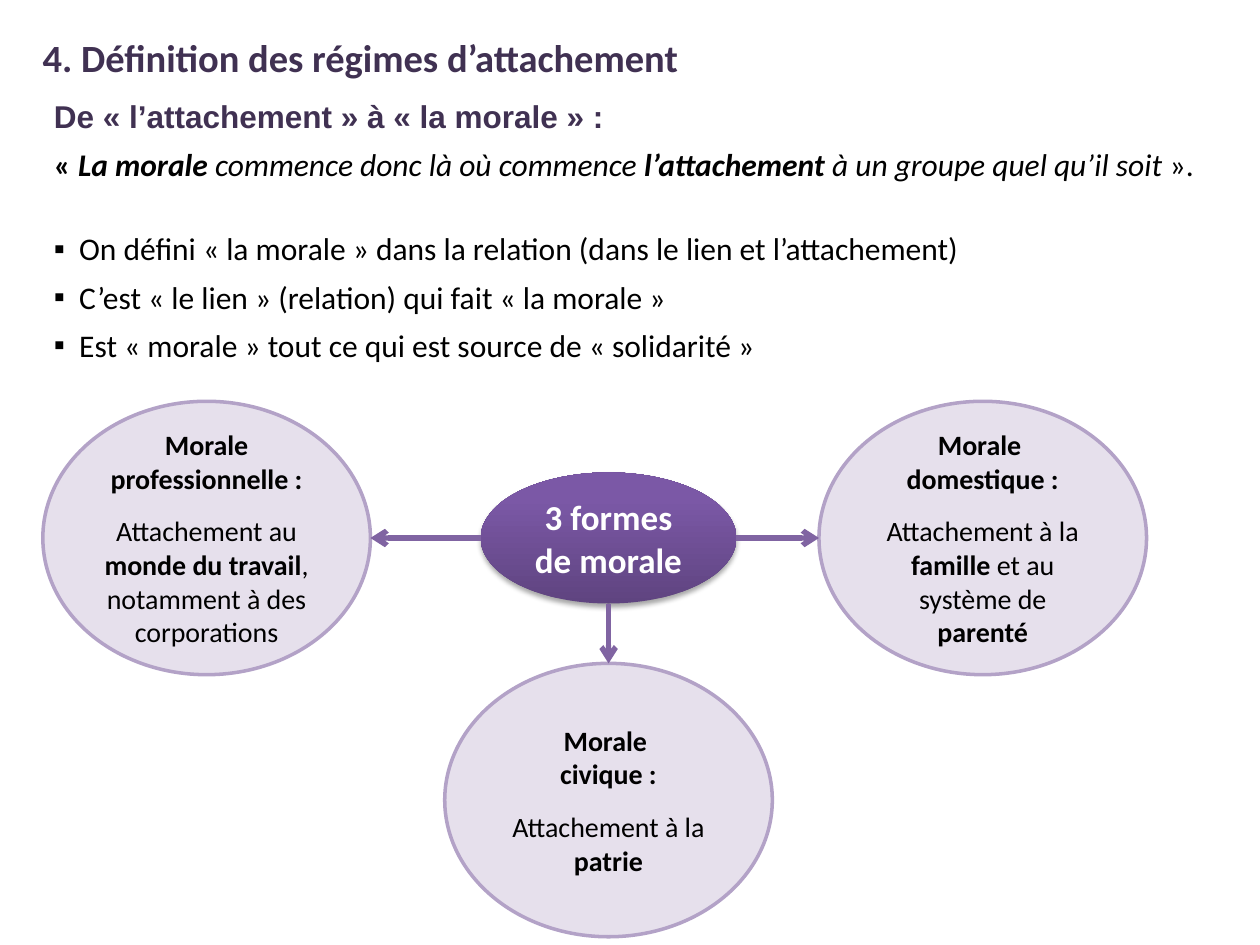
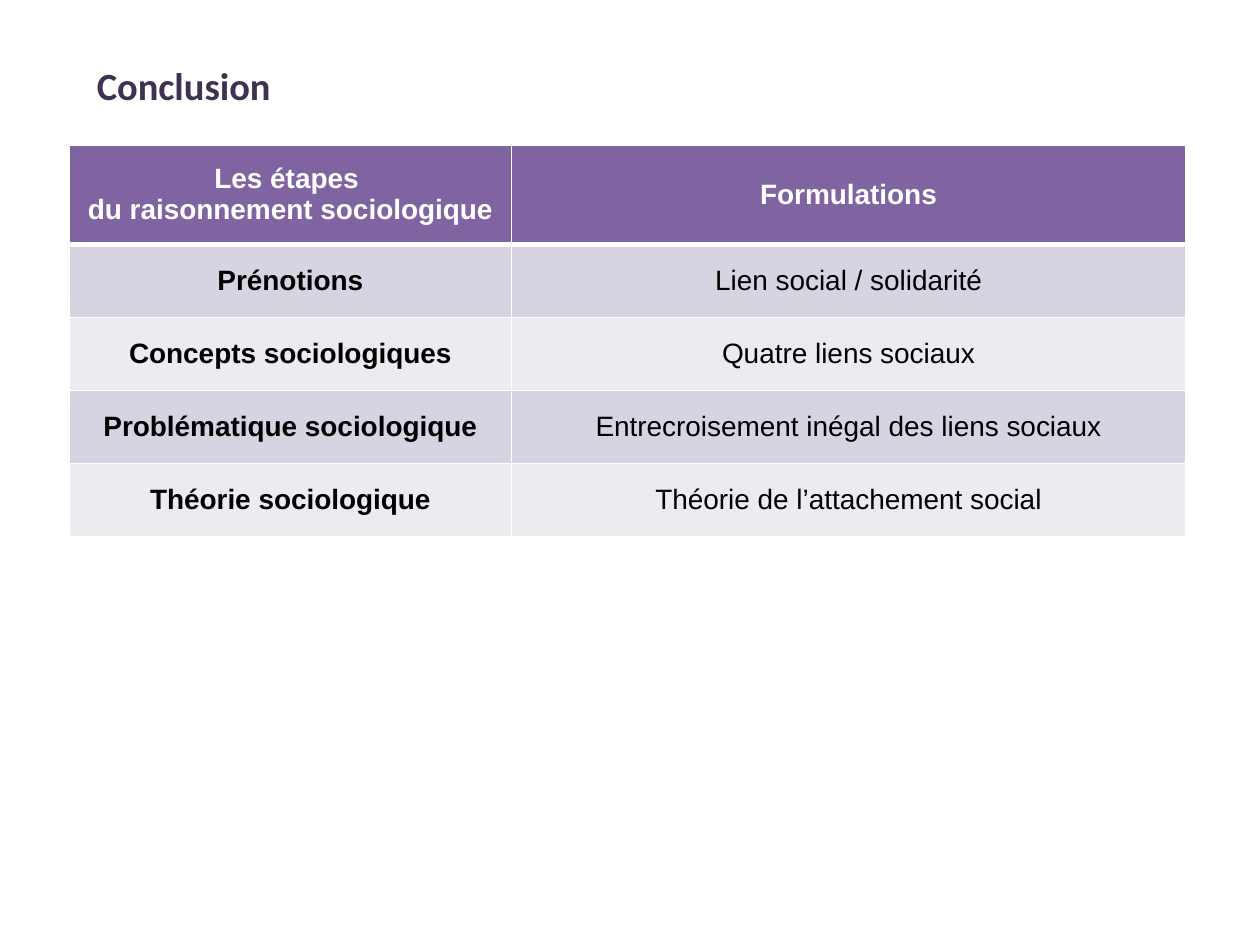
from lxml.etree import SubElement
from pptx import Presentation
from pptx.dml.color import RGBColor
from pptx.enum.shapes import MSO_CONNECTOR, MSO_SHAPE
from pptx.enum.text import MSO_ANCHOR, PP_ALIGN
from pptx.oxml.ns import qn
from pptx.util import Inches, Pt

COLORS = {
    "title": "403152", "text": "000000", "white": "FFFFFF",
    "accent": "8064A2", "bubble": "E6E0EC", "bubble_line": "B3A2C7",
    "hub_dark": "5F4480", "hub_light": "7B58A6",
    "band_dark": "D8D3E0", "band_light": "EDEAF0",
}
HUB_X, HUB_Y, HUB_W, HUB_H = 4.83, 4.27, 2.03, 1.04
BUBBLE_W, BUBBLE_H = 2.6, 2.17
BULLETS = [
    "On défini « la morale » dans la relation (dans le lien et l’attachement)",
    "C’est « le lien » (relation) qui fait « la morale »",
    "Est « morale » tout ce qui est source de « solidarité »",
]
QUOTE = [
    ("« ", "b"), ("La morale ", "bi"), ("commence donc là où commence ", "i"),
    ("l’attachement", "bi"), (" à un groupe quel qu’il soit", "i"), (" ».", ""),
]
STEPS = [
    ("Les étapes \ndu raisonnement sociologique", "Formulations"),
    ("Prénotions", "Lien social / solidarité"),
    ("Concepts sociologiques", "Quatre liens sociaux"),
    ("Problématique sociologique", "Entrecroisement inégal des liens sociaux"),
    ("Théorie sociologique", "Théorie de l’attachement social"),
]


def rgb(name):
    """Return the palette colour with this name."""
    return RGBColor.from_string(COLORS[name])


def style_run(r, size, color="text", style="", font="Calibri"):
    """Format a run; style holds b for bold and i for italic."""
    r.font.name, r.font.size = font, Pt(size)
    r.font.bold, r.font.italic = "b" in style, "i" in style
    r.font.color.rgb = rgb(color)


def fill_paragraph(p, runs, size, **look):
    """Write (text, style) runs into a paragraph."""
    for text, style in runs:
        r = p.add_run()
        r.text = text
        style_run(r, size, style=style, **look)


def indent(p, left, first=0, bullet=None):
    """Set the indents and the bullet of a justified paragraph."""
    p.alignment, p.space_before = PP_ALIGN.JUSTIFY, Pt(6)
    pPr = p._p.get_or_add_pPr()
    pPr.set("marL", str(Inches(left)))
    pPr.set("indent", str(Inches(first)))
    if bullet:
        SubElement(pPr, qn("a:buFont"), typeface="Arial")
        SubElement(pPr, qn("a:buChar"), char=bullet)


def add_text_box(s, x, y, w, h):
    """Add a wrapping text box and return its text frame."""
    tf = s.shapes.add_textbox(Inches(x), Inches(y), Inches(w), Inches(h)).text_frame
    tf.word_wrap = True
    return tf


def add_title(s, x, y, w, text):
    """Add the slide title."""
    p = add_text_box(s, x, y, w, 0.47).paragraphs[0]
    p.text = text
    style_run(p.runs[0], 22, "title", "b")


def add_intro(s):
    """Add the heading with its quotation."""
    tf = add_text_box(s, 0.24, 0.72, 9.53, 0.79)
    heading, quote = tf.paragraphs[0], tf.add_paragraph()
    heading.text = "De « l’attachement » à « la morale » :"
    style_run(heading.runs[0], 18, "title", "b", "Arial")
    fill_paragraph(quote, QUOTE, 18)
    for p in (heading, quote):
        indent(p, 0.09)


def add_bullets(s):
    """Add the bulleted definitions."""
    tf = add_text_box(s, 0.24, 1.77, 9.37, 1.18)
    tf.text = "\n".join(BULLETS)
    for p in tf.paragraphs:
        indent(p, 0.29, -0.2, "▪")
        style_run(p.runs[0], 18)


def add_ellipse(s, cx, cy, w, h):
    """Add an ellipse around a centre point."""
    sp = s.shapes.add_shape(MSO_SHAPE.OVAL, Inches(cx - w / 2), Inches(cy - h / 2),
                            Inches(w), Inches(h))
    sp.shadow.inherit = False
    sp.text_frame.word_wrap = True
    sp.text_frame.vertical_anchor = MSO_ANCHOR.MIDDLE
    return sp


def add_hub(s):
    """Add the central ellipse with its gradient and shadow."""
    sp = add_ellipse(s, HUB_X, HUB_Y, HUB_W, HUB_H)
    sp.line.fill.background()
    sp.fill.gradient()
    sp.fill.gradient_angle = 90
    stops = zip(sp.fill.gradient_stops, (0, 0.8), ("hub_dark", "hub_light"))
    for stop, position, color in stops:
        stop.position, stop.color.rgb = position, rgb(color)
    effects = sp._element.spPr.find(qn("a:effectLst"))
    shadow = SubElement(effects, qn("a:outerShdw"), blurRad=str(Pt(3.1)),
                        dist=str(Pt(1.8)), dir="5400000", rotWithShape="0")
    color = SubElement(shadow, qn("a:srgbClr"), val=COLORS["text"])
    SubElement(color, qn("a:alpha"), val="35000")
    p = sp.text_frame.paragraphs[0]
    p.text = "3 formes de morale"
    p.alignment = PP_ALIGN.CENTER
    style_run(p.runs[0], 20, "white", "b")


def add_bubble(s, cx, cy, heading, body):
    """Add a form of morality: bold heading lines, then its attachment."""
    sp = add_ellipse(s, cx, cy, BUBBLE_W, BUBBLE_H)
    sp.fill.solid()
    sp.fill.fore_color.rgb = rgb("bubble")
    sp.line.color.rgb, sp.line.width = rgb("bubble_line"), Pt(2)
    tf = sp.text_frame
    tf.text = heading
    for p in tf.paragraphs:
        style_run(p.runs[0], 16, style="b")
    p = tf.add_paragraph()
    p.space_before = Pt(11)
    fill_paragraph(p, body, 16)
    for p in tf.paragraphs:
        p.alignment = PP_ALIGN.CENTER


def add_arrow(s, x1, y1, x2, y2):
    """Add a straight arrow."""
    c = s.shapes.add_connector(MSO_CONNECTOR.STRAIGHT, Inches(x1), Inches(y1),
                               Inches(x2), Inches(y2))
    c.line.color.rgb, c.line.width = rgb("accent"), Pt(3)
    SubElement(c.line._get_or_add_ln(), qn("a:tailEnd"), type="arrow")
    SubElement(c._element.spPr, qn("a:effectLst"))


def set_borders(cell, **widths):
    """Draw white cell borders with the given widths in points."""
    tcPr = cell._tc.get_or_add_tcPr()
    for side in "LRTB":
        ln = SubElement(tcPr, qn(f"a:ln{side}"), w=str(Pt(widths.get(side, 1))))
        SubElement(SubElement(ln, qn("a:solidFill")), qn("a:srgbClr"), val=COLORS["white"])


def add_steps_table(s):
    """Add the table of reasoning steps."""
    table = s.shapes.add_table(len(STEPS), 2, Inches(0.55), Inches(1.15),
                               Inches(8.86), Inches(3.11)).table
    table.horz_banding = False
    for column, width in zip(table.columns, (3.51, 5.35)):
        column.width = Inches(width)
    for i, texts in enumerate(STEPS):
        table.rows[i].height = Inches(0.58 if i else 0.79)
        fill = ("band_light", "band_dark")[i % 2] if i else "accent"
        for j, text in enumerate(texts):
            cell = table.cell(i, j)
            set_borders(cell, T=3 if i == 1 else 1, B=1 if i else 3)
            cell.fill.solid()
            cell.fill.fore_color.rgb = rgb(fill)
            cell.vertical_anchor = MSO_ANCHOR.MIDDLE
            cell.text_frame.text = text
            for p in cell.text_frame.paragraphs:
                p.alignment = PP_ALIGN.CENTER
                style_run(p.runs[0], 16, "text" if i else "white",
                          "" if i and j else "b", "Arial")


def build_regimes(s):
    """Build the slide on the three forms of morality."""
    left_x, right_x, civic_y = 1.64, 7.8, 6.35
    add_intro(s)
    add_bullets(s)
    add_hub(s)
    add_bubble(s, right_x, HUB_Y, "Morale \ndomestique :",
               [("Attachement à la ", ""), ("famille ", "b"),
                ("et au système de ", ""), ("parenté", "b")])
    add_bubble(s, left_x, HUB_Y, "Morale professionnelle :",
               [("Attachement au ", ""), ("monde du travail", "b"),
                (", notamment à des corporations", "")])
    add_bubble(s, HUB_X, civic_y, "Morale \ncivique :",
               [("Attachement à la ", ""), ("patrie", "b")])
    add_arrow(s, HUB_X - HUB_W / 2, HUB_Y, left_x + BUBBLE_W / 2, HUB_Y)
    add_arrow(s, HUB_X + HUB_W / 2, HUB_Y, right_x - BUBBLE_W / 2, HUB_Y)
    add_arrow(s, HUB_X, HUB_Y + HUB_H / 2, HUB_X, civic_y - BUBBLE_H / 2)
    add_title(s, 0.24, 0.22, 5.31, "4. Définition des régimes d’attachement")


def build_conclusion(s):
    """Build the concluding slide."""
    add_title(s, 0.67, 0.44, 3.31, "Conclusion")
    add_steps_table(s)


def main():
    """Build and save the presentation."""
    prs = Presentation()
    prs.slide_width, prs.slide_height = Inches(10), Inches(7.5)
    for build in (build_regimes, build_conclusion):
        build(prs.slides.add_slide(prs.slide_layouts[6]))
    prs.save("out.pptx")


if __name__ == "__main__":
    main()
